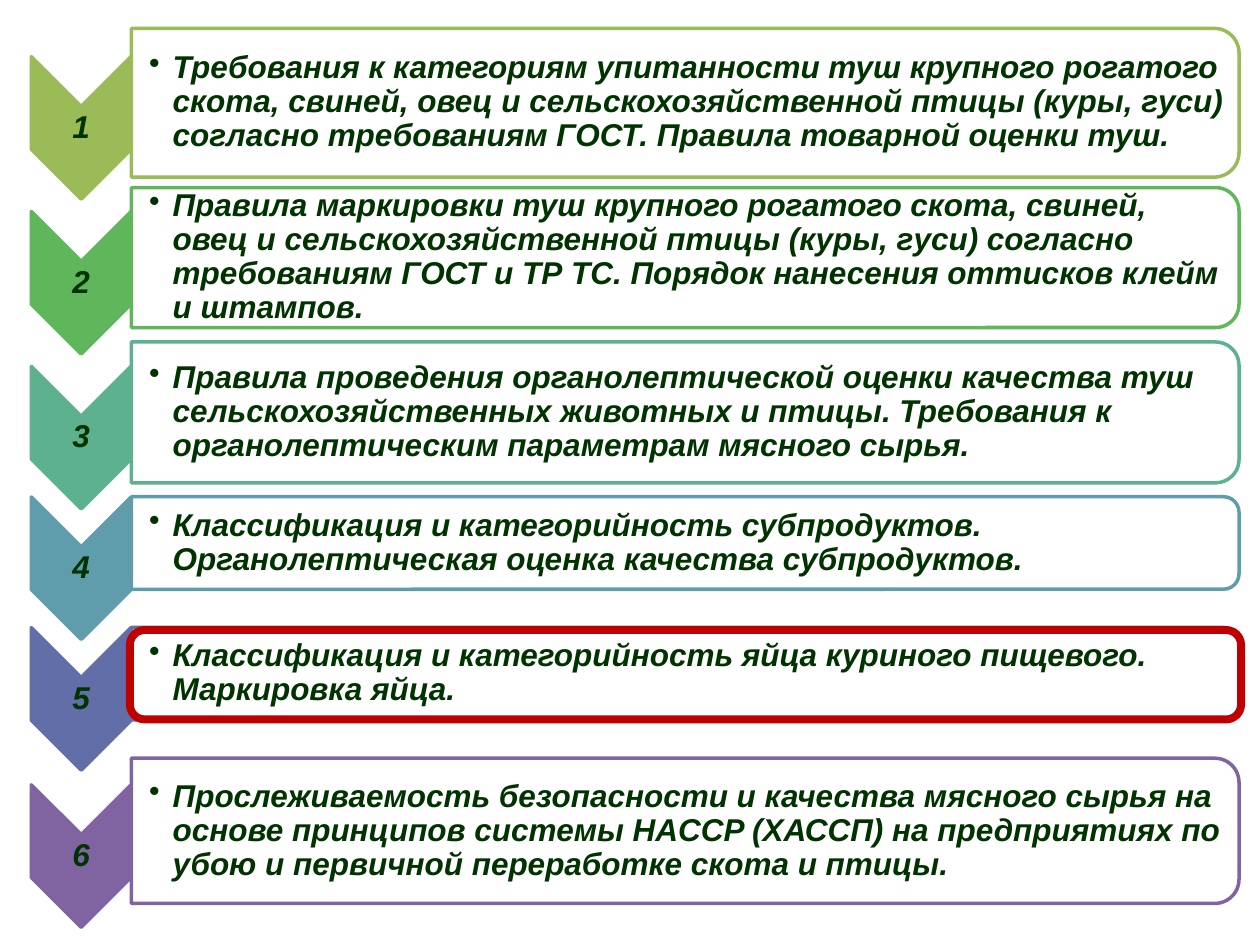
from lxml import etree
from pptx import Presentation
from pptx.dml.color import RGBColor
from pptx.enum.shapes import MSO_SHAPE
from pptx.enum.text import MSO_ANCHOR, PP_ALIGN
from pptx.oxml.ns import qn
from pptx.util import Pt

CHEVRON = MSO_SHAPE.CHEVRON
PANEL = MSO_SHAPE.ROUND_2_SAME_RECTANGLE
FRAME = MSO_SHAPE.ROUNDED_RECTANGLE
MIDDLE = MSO_ANCHOR.MIDDLE
CENTER = PP_ALIGN.CENTER

CHEVRON_LENGTH, CHEVRON_WIDTH = 81.4, 57
CHEVRON_X = 46.4
CHEVRON_DROP = 14.4  # chevron centre below panel centre
PANEL_LEFT, PANEL_WIDTH = 75.1, 632.9
CORNER_INSET = 0.048  # text inset as a share of panel height

# colour, panel centre, panel height, topic
STEPS = [
    ("9BBB59", 58.7, 85, "Требования к категориям упитанности туш крупного рогатого скота, "
     "свиней, овец и сельскохозяйственной птицы (куры, гуси) согласно требованиям ГОСТ. "
     "Правила товарной оценки туш."),
    ("5FB65B", 147.2, 80, "Правила маркировки туш крупного рогатого скота, свиней, овец и "
     "сельскохозяйственной птицы (куры, гуси) согласно требованиям ГОСТ и ТР ТС. "
     "Порядок нанесения оттисков клейм и штампов."),
    ("5DB18E", 235.7, 80.5, "Правила проведения органолептической оценки качества туш "
     "сельскохозяйственных животных и птицы. Требования к органолептическим параметрам "
     "мясного сырья."),
    ("5F9DAC", 310.3, 52.9, "Классификация и категорийность субпродуктов. "
     "Органолептическая оценка качества субпродуктов."),
    ("626EA7", 385, 52.9, "Классификация и категорийность яйца куриного пищевого. "
     "Маркировка яйца."),
    ("8064A2", 474.8, 83, "Прослеживаемость безопасности и качества мясного сырья на основе "
     "принципов системы HACCP (ХАССП) на предприятиях по убою и первичной переработке "
     "скота и птицы."),
]


def rgb(code):
    return RGBColor.from_string(code)


def add_text(left, center_y, width, height, text, left_inset):
    """Add a vertically centred text box and return its paragraph."""
    box = slide.shapes.add_textbox(Pt(left), Pt(center_y - height / 2), Pt(width), Pt(height))
    frame = box.text_frame
    frame.word_wrap = True
    frame.vertical_anchor = MIDDLE
    frame.margin_left = Pt(left_inset)
    frame.margin_top = frame.margin_right = frame.margin_bottom = Pt(0.9)
    paragraph = frame.paragraphs[0]
    paragraph.text = text
    paragraph.line_spacing = 0.9
    font = paragraph.font
    font.name, font.size = "Arial", Pt(18)
    font.bold = font.italic = True
    font.color.rgb = rgb("003300")
    return paragraph


prs = Presentation()
prs.slide_width, prs.slide_height = Pt(720), Pt(540)
slide = prs.slides.add_slide(prs.slide_layouts[6])

for number, (color, center_y, height, topic) in enumerate(STEPS, start=1):
    chevron_y = center_y + CHEVRON_DROP
    panel_x = PANEL_LEFT + PANEL_WIDTH / 2
    for kind, x, y, length, breadth, fill in [
        (CHEVRON, CHEVRON_X, chevron_y, CHEVRON_LENGTH, CHEVRON_WIDTH, color),
        (PANEL, panel_x, center_y, height, PANEL_WIDTH, "FFFFFF"),
    ]:
        shape = slide.shapes.add_shape(
            kind, Pt(x - length / 2), Pt(y - breadth / 2), Pt(length), Pt(breadth))
        shape.rotation = 90
        shape.shadow.inherit = False
        shape.fill.solid()
        shape.fill.fore_color.rgb = rgb(fill)
        shape.line.color.rgb = rgb(color)
        shape.line.width = Pt(2)
        if kind == PANEL:
            white = shape.fill._xPr.find(qn("a:solidFill"))[0]
            etree.SubElement(white, qn("a:alpha"), val="90000")

    label = add_text(CHEVRON_X - CHEVRON_WIDTH / 2, chevron_y, CHEVRON_WIDTH, 24.4,
                     str(number), 0.9)
    label.alignment = CENTER

    inset = height * CORNER_INSET
    bullet = add_text(PANEL_LEFT, center_y, PANEL_WIDTH - inset, height - 2 * inset, topic, 10.1)
    bullet.level = 1
    properties = bullet._p.get_or_add_pPr()
    properties.set("marL", str(Pt(13.5)))
    properties.set("indent", str(Pt(-13.5)))
    etree.SubElement(properties, qn("a:buChar"), char="•")
    # the schema wants the bullet before the default run properties
    properties.append(properties.find(qn("a:defRPr")))

highlight = slide.shapes.add_shape(FRAME, Pt(74.2), Pt(360), Pt(635), Pt(51.1))
highlight.shadow.inherit = False
highlight.fill.background()
highlight.line.color.rgb = rgb("C00000")
highlight.line.width = Pt(4.5)

prs.save("out.pptx")
